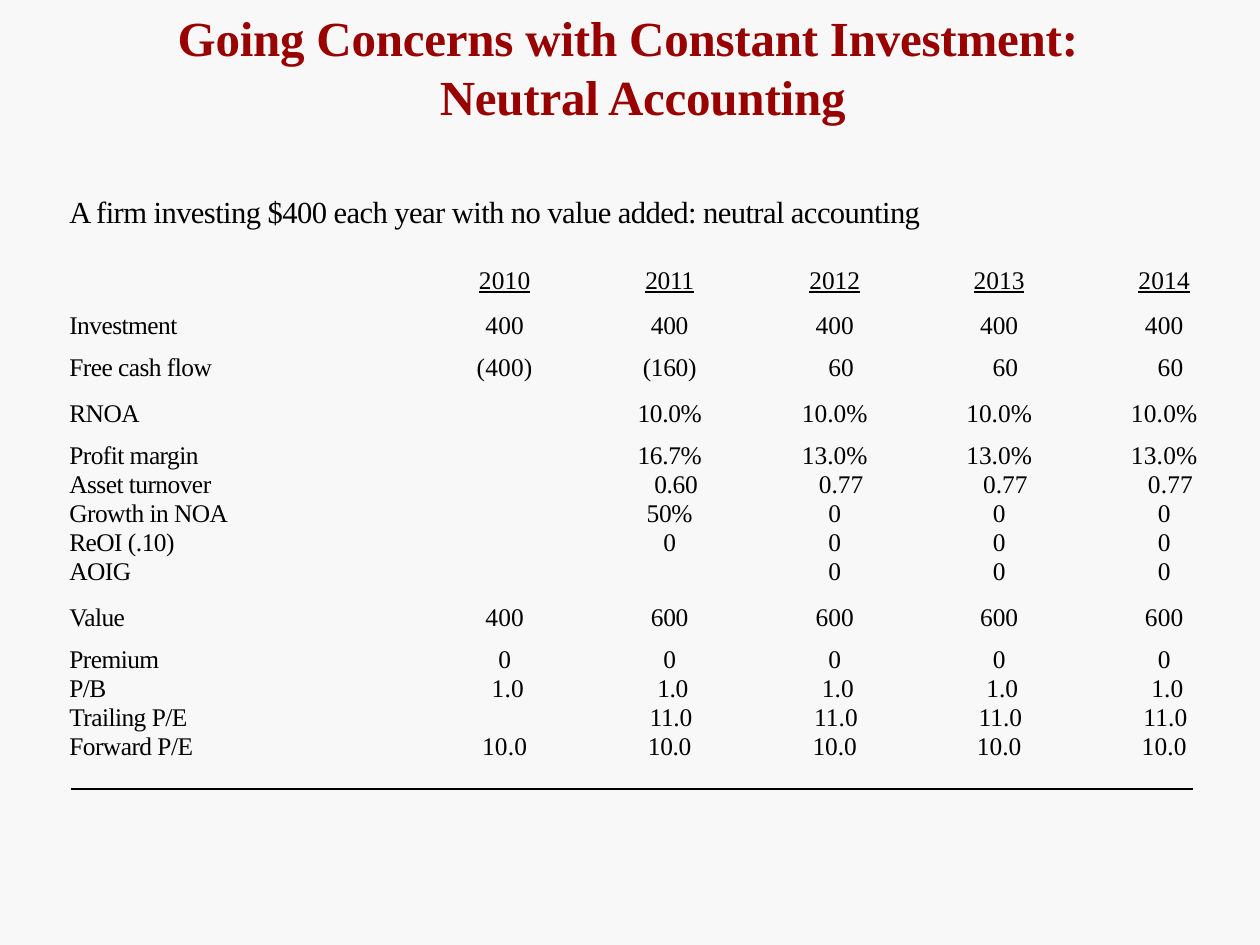
from dataclasses import dataclass

from lxml.etree import SubElement
from pptx import Presentation
from pptx.dml.color import RGBColor
from pptx.enum.shapes import MSO_CONNECTOR as Connector
from pptx.enum.text import MSO_ANCHOR as Anchor, MSO_AUTO_SIZE as AutoSize, PP_ALIGN as Align
from pptx.oxml.ns import qn
from pptx.util import Inches, Pt


@dataclass(frozen=True)
class Theme:
    font: str = "Times New Roman"
    paper: RGBColor = RGBColor(0xF8, 0xF8, 0xF8)
    ink: RGBColor = RGBColor(0, 0, 0)
    heading: RGBColor = RGBColor(0x99, 0, 0)
    title_size: float = 28
    lead_size: float = 17.5
    table_size: float = 14.5


THEME = Theme()
NO_GRID_STYLE = "{2D5ABB26-0587-4C30-8999-92F81FD0307C}"

COLUMN_WIDTHS = [2.28, 1.83, 1.33, 1.31, 1.31, 0.94]
COLUMN_INDENTS = [0.03, 0.58, 0.04, 0.02, 0.01, 0.38]
COLUMN_TRACKING = [-0.3, 0.1, -0.2, 0, 0, 0.1]
HEADER_HEIGHT, ROW_HEIGHT, TALL_ROW_HEIGHT = 0.34, 0.23, 0.35
SECTION_STARTS = {"Investment", "RNOA", "Value"}
SECTION_ENDS = {"Free cash flow", "AOIG"}
ROW_SHIFTS = {"Asset turnover": 0.1, "P/B": 0.05, "Trailing P/E": 0.02}

ROWS = [
    ["", "2010", "2011", "2012", "2013", "2014"],
    ["Investment"] + ["400"] * 5,
    ["Free cash flow", "(400)", "(160)", "60", "60", "60"],
    ["RNOA", ""] + ["10.0%"] * 4,
    ["Profit margin", "", "16.7%", "13.0%", "13.0%", "13.0%"],
    ["Asset turnover", "", "0.60", "0.77", "0.77", "0.77"],
    ["Growth in NOA", "", "50%", "0", "0", "0"],
    ["ReOI (.10)", ""] + ["0"] * 4,
    ["AOIG", "", ""] + ["0"] * 3,
    ["Value", "400"] + ["600"] * 4,
    ["Premium"] + ["0"] * 5,
    ["P/B"] + ["1.0"] * 5,
    ["Trailing P/E", ""] + ["11.0"] * 4,
    ["Forward P/E"] + ["10.0"] * 5,
]


def style_paragraph(paragraph, size, color, tracking, align=Align.LEFT):
    paragraph.alignment = align
    font = paragraph.font
    font.name, font.size, font.color.rgb = THEME.font, Pt(size), color
    defaults = paragraph._p.get_or_add_pPr().get_or_add_defRPr()
    defaults.set("spc", str(round(tracking * 100)))
    return paragraph


def fill_placeholder(placeholder, text, box, size, color, tracking, hanging=0):
    placeholder.left, placeholder.top, placeholder.width, placeholder.height = map(Inches, box)
    frame = placeholder.text_frame
    frame.text = text
    frame.word_wrap = True
    frame.auto_size = AutoSize.NONE
    frame.vertical_anchor = Anchor.TOP
    frame.margin_left = frame.margin_right = frame.margin_bottom = 0
    frame.margin_top = Inches(0.01)
    paragraph = style_paragraph(frame.paragraphs[0], size, color, tracking)
    paragraph.space_before = Pt(0.9)
    properties = paragraph._p.get_or_add_pPr()
    properties.set("marL", str(Inches(hanging + 0.01)))
    properties.set("indent", str(Inches(-hanging)))
    properties.insert_element_before(properties.makeelement(qn("a:buNone")), "a:tabLst", "a:defRPr")
    return paragraph


def row_height(row_number, label):
    if row_number == 0:
        return HEADER_HEIGHT
    return TALL_ROW_HEIGHT if label in SECTION_STARTS | SECTION_ENDS else ROW_HEIGHT


def value_shift(label, value):
    return 0.1 if value == "60" else ROW_SHIFTS.get(label, 0)


def fill_cell(cell, text, row_number, column_number, label):
    cell.fill.solid()
    cell.fill.fore_color.rgb = THEME.paper
    cell.vertical_anchor = Anchor.TOP
    shift = value_shift(label, text) if column_number else 0
    cell.margin_left = Inches(COLUMN_INDENTS[column_number] + shift)
    cell.margin_right = cell.margin_top = cell.margin_bottom = 0
    cell.text = text
    align = Align.CENTER if column_number else Align.LEFT
    paragraph = style_paragraph(cell.text_frame.paragraphs[0], THEME.table_size, THEME.ink,
                                COLUMN_TRACKING[column_number], align)
    starts_section = label in SECTION_STARTS
    paragraph.line_spacing = Pt(17 if starts_section else 15.8)
    paragraph.space_before = Pt(7.1 if starts_section else 0)
    if row_number == 0:
        paragraph.font.underline = True


def add_figures(slide):
    heights = [row_height(number, row[0]) for number, row in enumerate(ROWS)]
    frame = slide.shapes.add_table(len(ROWS), len(COLUMN_WIDTHS), Inches(0.52), Inches(2.12),
                                   Inches(sum(COLUMN_WIDTHS)), Inches(sum(heights)))
    figures = frame.table
    figures.first_row = figures.horz_banding = False
    figures._tbl.tblPr.find(qn("a:tableStyleId")).text = NO_GRID_STYLE
    for column, width in zip(figures.columns, COLUMN_WIDTHS):
        column.width = Inches(width)
    for row_number, values in enumerate(ROWS):
        figures.rows[row_number].height = Inches(heights[row_number])
        for column_number, value in enumerate(values):
            fill_cell(figures.cell(row_number, column_number), value,
                      row_number, column_number, values[0])


def add_rule(slide, top, weight):
    rule = slide.shapes.add_connector(Connector.STRAIGHT, Inches(0.56), Inches(top),
                                      Inches(9.47), Inches(top))
    rule.line.color.rgb = THEME.ink
    rule.line.width = Pt(weight)
    SubElement(rule._element.spPr, qn("a:effectLst"))


def main():
    deck = Presentation()
    deck.slide_width, deck.slide_height = Inches(10), Inches(7.5)
    slide = deck.slides.add_slide(deck.slide_layouts[1])
    slide.background.fill.solid()
    slide.background.fill.fore_color.rgb = THEME.paper
    title, lead = slide.placeholders
    heading = fill_placeholder(title, "Going Concerns with Constant Investment: Neutral Accounting",
                               (1.4, 0.05, 7.24, 0.96), THEME.title_size, THEME.heading,
                               -0.1, hanging=2.08)
    heading.font.bold = True
    fill_placeholder(lead, "A firm investing $400 each year with no value added: neutral accounting",
                     (0.54, 1.52, 6.88, 0.32), THEME.lead_size, THEME.ink, -0.33)
    add_figures(slide)
    for top, weight in ((6.27, 0.56), (6.26, 0.7)):
        add_rule(slide, top, weight)
    deck.save("out.pptx")


if __name__ == "__main__":
    main()
